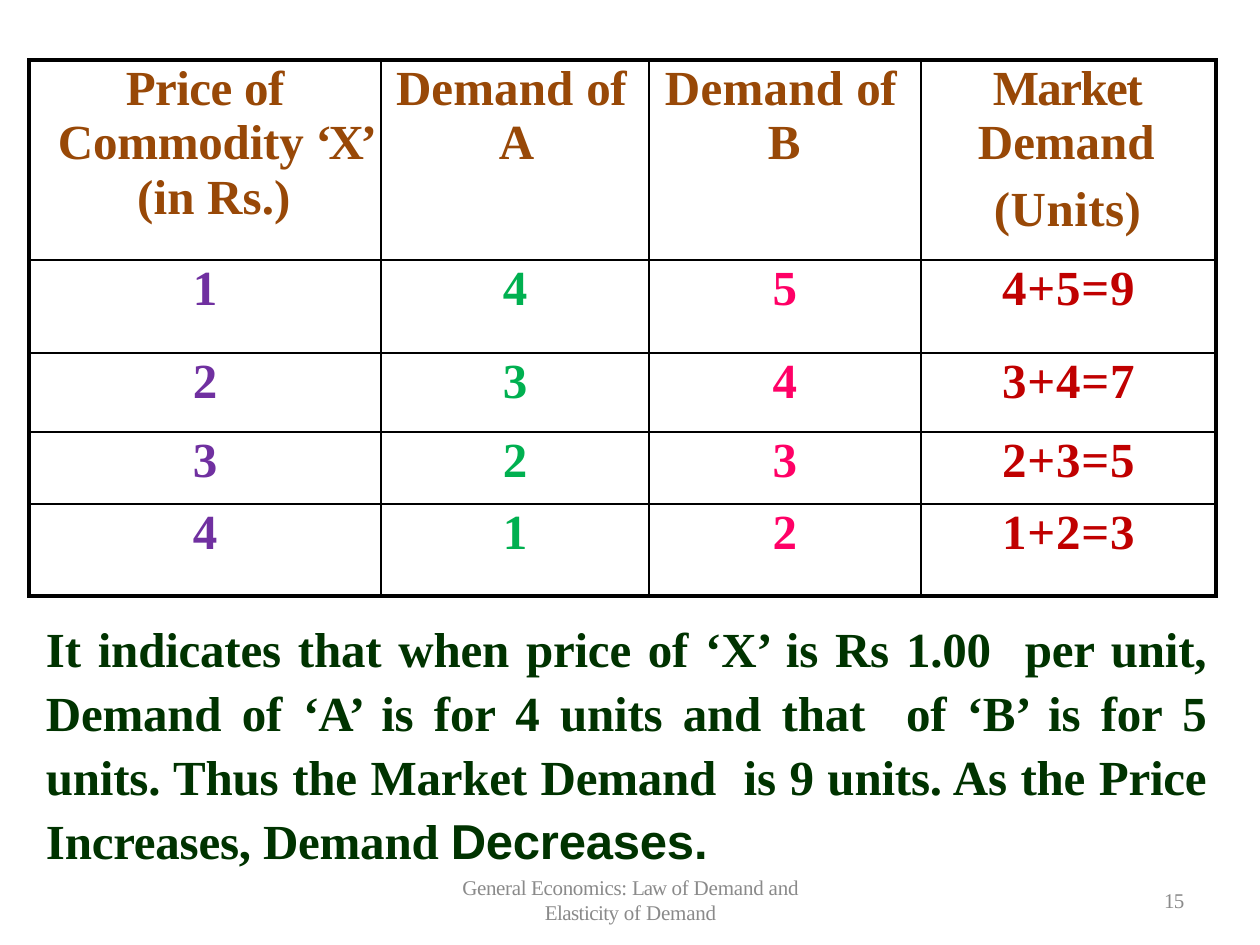
import pptx
import pptx.dml.color
import pptx.enum.text
import pptx.oxml
import pptx.oxml.ns
import pptx.util

EMU_PER_PX = 914400 / 126
COLORS = {
    "border": "000000", "header": "984807", "price": "7030A0", "demand_a": "00B050",
    "demand_b": "FF0066", "market": "C00000", "body": "003300", "footer": "8A8A8A",
}
ALIGN = pptx.enum.text.PP_ALIGN


def px(value):
    return pptx.util.Emu(round(value * EMU_PER_PX))


class SlideBuilder:
    font = "Times New Roman"
    outer_line = 2.25
    inner_line = 1

    def __init__(self, slide):
        self.slide = slide

    def fill_paragraph(self, paragraph, runs, size, color, bold=False, align=ALIGN.LEFT,
                       margin=0, indent=0, before=0, spacing=None):
        """Add runs given as (text, letter spacing in points, optional font)."""
        paragraph.alignment = align
        paragraph.space_before = pptx.util.Pt(before)
        if spacing:
            paragraph.line_spacing = spacing
        properties = paragraph._p.get_or_add_pPr()
        properties.set("marL", str(px(margin)))
        properties.set("indent", str(px(indent)))
        for text, tracking, *font in runs:
            run = paragraph.add_run()
            run.text = text
            run.font.name = font[0] if font else self.font
            run.font.size = pptx.util.Pt(size)
            run.font.bold = bold
            run.font.color.rgb = pptx.dml.color.RGBColor.from_string(COLORS[color])
            run._r.get_or_add_rPr().set("spc", str(round(tracking * 100)))

    def text(self, left, top, width, height, paragraphs, inset_top=0, **style):
        shape = self.slide.shapes.add_textbox(px(left), px(top), px(width), px(height))
        frame = shape.text_frame
        frame.word_wrap = True
        frame.margin_left = frame.margin_right = frame.margin_bottom = 0
        frame.margin_top = px(inset_top)
        for index, runs in enumerate(paragraphs):
            paragraph = frame.add_paragraph() if index else frame.paragraphs[0]
            self.fill_paragraph(paragraph, runs, **style)

    def table(self, left, top, widths, heights):
        frame = self.slide.shapes.add_table(
            len(heights), len(widths), px(left), px(top), px(sum(widths)), px(sum(heights)))
        table = frame.table
        table.first_row = table.horz_banding = False
        for column, width in zip(table.columns, widths):
            column.width = px(width)
        for row, height in zip(table.rows, heights):
            row.height = px(height)
        last_row, last_column = len(heights) - 1, len(widths) - 1
        for row in range(len(heights)):
            for column in range(len(widths)):
                cell = table.cell(row, column)
                cell.margin_left = cell.margin_right = cell.margin_bottom = 0
                cell.margin_top = px(2)
                cell.fill.background()
                self.borders(cell, {"lnL": column == 0, "lnR": column == last_column,
                                    "lnT": row == 0, "lnB": row == last_row})
        return table

    def borders(self, cell, sides):
        properties = cell._tc.get_or_add_tcPr()
        for position, (side, is_outer) in enumerate(sides.items()):
            width = pptx.util.Pt(self.outer_line if is_outer else self.inner_line)
            properties.insert(position, pptx.oxml.parse_xml(
                f'<a:{side} {pptx.oxml.ns.nsdecls("a")} w="{width}"><a:solidFill>'
                f'<a:srgbClr val="{COLORS["border"]}"/></a:solidFill></a:{side}>'))


def main():
    presentation = pptx.Presentation()
    presentation.slide_width = pptx.util.Inches(10)
    presentation.slide_height = pptx.util.Inches(7.5)
    builder = SlideBuilder(presentation.slides.add_slide(presentation.slide_layouts[6]))

    # Demand table: headers
    table = builder.table(29, 60, [352, 268, 272, 295], [200, 93, 79, 72, 92])
    headers = [
        ([("Price ", -0.3), ("of ", -0.2), ("Commodity ", -0.1), ("‘X’ ", -1.9),
          ("(in Rs.)", 0.1)], dict(align=ALIGN.CENTER, margin=18, indent=-20)),
        ([("Demand ", 0.1), ("of ", -0.2), ("A", -1.9)], dict(margin=118, indent=-103)),
        ([("Demand ", 0.2), ("of ", -0.2), ("B", 0.2)], dict(margin=119, indent=-103)),
        ([("Market ", -0.9), ("Demand", 0)], dict(margin=57, indent=15)),
    ]
    header_style = dict(size=28, color="header", bold=True)
    for column, (runs, layout) in enumerate(headers):
        paragraph = table.cell(0, column).text_frame.paragraphs[0]
        builder.fill_paragraph(paragraph, runs, before=1.4, **header_style, **layout)
    units = table.cell(0, 3).text_frame.add_paragraph()
    builder.fill_paragraph(units, [("(Units)", 0.3)], margin=73, before=6.8, **header_style)

    # Demand table: market demand is the sum of both buyers
    demands = [(1, 4, 5), (2, 3, 4), (3, 2, 3), (4, 1, 2)]
    value_colors = ["price", "demand_a", "demand_b", "market"]
    for row, (price, demand_a, demand_b) in enumerate(demands, start=1):
        market = f"{demand_a}+{demand_b}={demand_a + demand_b}"
        values = [price, demand_a, demand_b, market]
        for column, (value, color) in enumerate(zip(values, value_colors)):
            builder.fill_paragraph(
                table.cell(row, column).text_frame.paragraphs[0],
                [(str(value), 0.5 if color == "market" else 0)], size=28,
                color=color, bold=True, align=ALIGN.CENTER, before=1.4)

    # Explanation
    explanation = [
        ("It indicates that when price of ‘X’ is Rs 1.00  per unit, Demand of ", -0.1),
        ("‘A’ ", -0.6),
        ("is for 4 units and that  of ‘B’ is for 5 units. Thus the Market Demand  is 9 units. "
         "As the Price Increases, Demand ", -0.1),
        ("Decreases.", -0.1, "Arial"),
    ]
    builder.text(45, 612, 1162, 304, [explanation], inset_top=1, size=28, color="body",
                 bold=True, align=ALIGN.JUSTIFY, margin=1, before=1, spacing=1.09)

    # Footer and slide number
    footer_style = dict(size=12, color="footer", spacing=pptx.util.Pt(13.8))
    builder.text(457, 876, 347, 53, [
        [("General Economics: ", -0.2), ("Law ", -0.6), ("of Demand and", -0.1)],
        [("Elasticity ", -0.3), ("of Demand", -0.1)],
    ], align=ALIGN.CENTER, **footer_style)
    builder.text(1159, 881, 30, 34, [[("15", -0.4)]], inset_top=8, margin=5, **footer_style)

    presentation.save("out.pptx")


if __name__ == "__main__":
    main()
